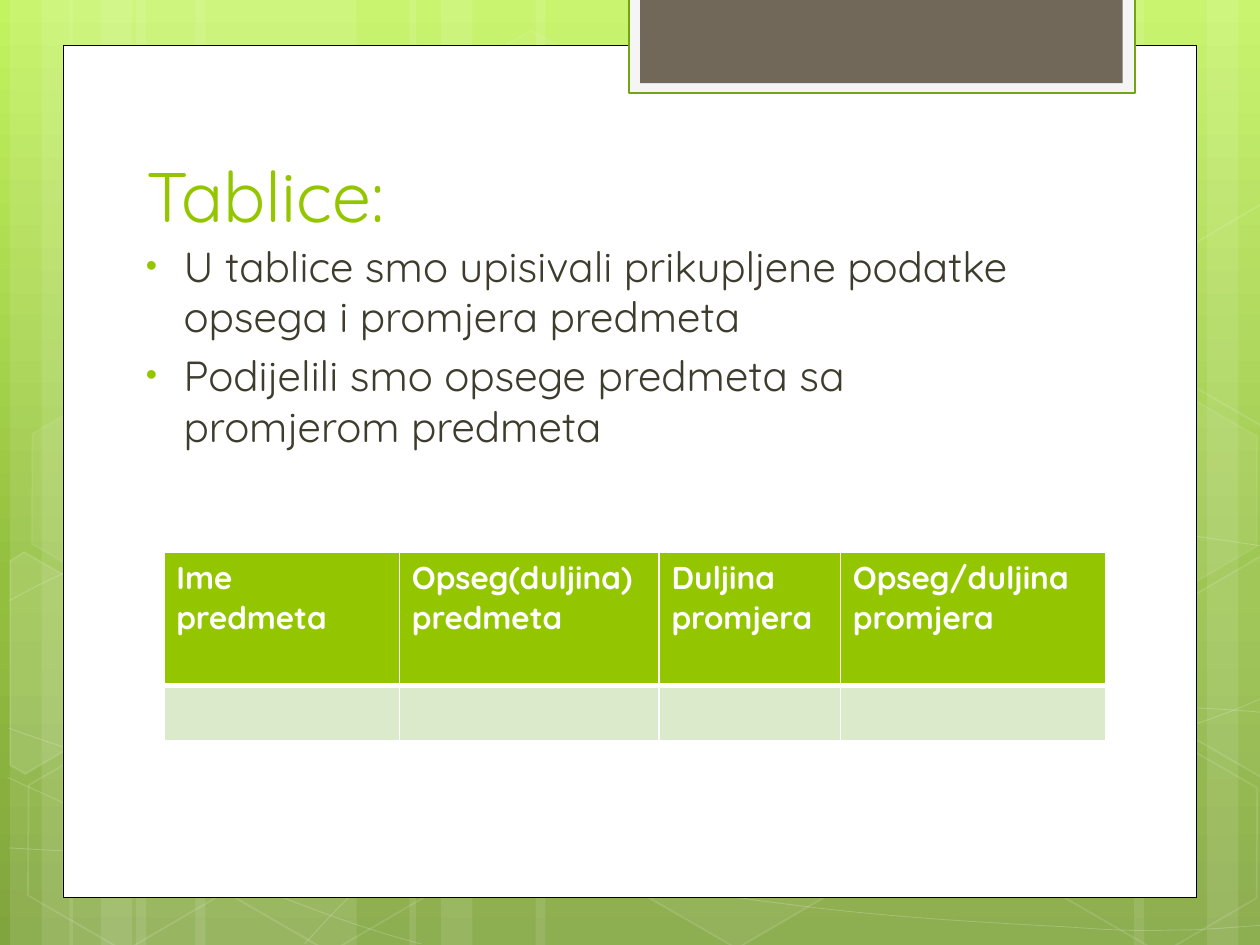
from copy import deepcopy
from dataclasses import dataclass
from math import cos, radians, sin

from lxml.etree import SubElement
from pptx import Presentation
from pptx.dml.color import RGBColor
from pptx.enum.shapes import MSO_SHAPE
from pptx.enum.text import MSO_ANCHOR, MSO_AUTO_SIZE, PP_ALIGN
from pptx.oxml.ns import qn
from pptx.util import Inches, Pt


@dataclass(frozen=True)
class Theme:
    font: str = "Quicksand"
    white: str = "FFFFFF"
    accent: str = "94C600"
    body: str = "3E3D2D"
    black: str = "000000"
    tab_frame: str = "F5F5F5"
    tab_line: str = "74A510"
    tab_fill: str = "71685A"
    row_fill: str = "DCEACC"
    backdrop: tuple = ((0, "C3F35F"), (0.62, "93BF3F"), (1, "81A53E"))
    title_size: int = 40
    body_size: int = 24
    table_size: int = 18


@dataclass(frozen=True)
class Box:
    left: float
    top: float
    width: float
    height: float

    def inside(self, left, top, width, height):
        return Box(self.left + left, self.top + top, width, height)

    def lengths(self):
        return [Inches(v) for v in (self.left, self.top, self.width, self.height)]


THEME = Theme()
TILT = 30

# Hexagons: left, top, fill opacity (0 = none), line opacity
HEXAGONS = [
    (3.34, 0.36, 4, 8), (4.97, 5.89, 6, 12), (0.11, 5.91, 0, 12),
    (0.14, 3.12, 7, 8), (1.74, 5.92, 0, 12), (7.53, 4.53, 10, 12),
    (8.34, 5.93, 0, 12), (8.34, 3.14, 7, 8),
]
# Hexagons cut by the slide edge, with the centre of their tilted frames
LEFT_CUT = [(0.08, 4.45), (0.19, 4.38), (0.96, 4.82), (0.95, 5.7), (0.2, 6.14), (0.08, 6.07)]
LEFT_CENTRE = (0.36, 5.35)
RIGHT_CUT = [(9.26, 4.85), (10.01, 4.41), (10.09, 4.46), (10.09, 6.13), (10.02, 6.17), (9.26, 5.73)]
RIGHT_CENTRE = (9.85, 5.2)
RIGHT_CUT_RISE = 2.79
# Sweeping lines: a start point, then three points for each cubic segment
CURVES = [
    [(0.07, 6.73), (0.61, 6.76), (1.15, 6.79), (1.9, 6.78), (2.65, 6.77), (3.58, 6.75), (4.58, 6.65),
     (5.58, 6.55), (7, 6.36), (7.92, 6.17), (8.83, 5.98), (9.77, 5.68), (10.07, 5.51)],
    [(0.07, 4.77), (0.36, 4.61), (0.65, 4.46), (1.21, 4.31), (1.78, 4.16), (2.59, 3.94), (3.47, 3.87),
     (4.36, 3.8), (5.44, 3.79), (6.54, 3.87), (7.64, 3.95), (9.47, 4.26), (10.07, 4.34)],
    [(0.06, 6.17), (1.27, 6.72), (2.47, 7.27), (3.34, 7.49)],
    [(0.07, 5.78), (0.38, 5.89), (0.7, 6), (1.28, 6.16), (1.86, 6.31), (2.73, 6.56), (3.57, 6.73),
     (4.4, 6.9), (5.45, 7.08), (6.28, 7.18), (7.11, 7.29), (8, 7.33), (8.53, 7.36),
     (9.05, 7.4), (9.19, 7.38), (9.45, 7.38), (9.71, 7.37), (9.89, 7.35), (10.07, 7.34)],
    [(2.42, 7.49), (2.6, 7.29), (2.78, 7.09), (3.02, 6.91), (3.26, 6.73), (3.6, 6.53), (3.88, 6.39),
     (4.16, 6.25), (4.33, 6.19), (4.7, 6.09), (5.06, 5.99), (5.73, 5.85), (6.08, 5.78),
     (6.44, 5.71), (6.49, 5.71), (6.8, 5.69), (7.11, 5.66), (7.6, 5.63), (7.94, 5.62),
     (8.29, 5.61), (8.86, 5.62), (8.86, 5.62), (8.86, 5.62), (9.53, 5.62), (9.53, 5.62),
     (9.71, 5.63), (9.88, 5.64), (9.97, 5.65), (10.06, 5.66), (10.03, 5.65), (10.06, 5.66)],
]
BULLETS = [
    "U tablice smo upisivali prikupljene podatke opsega i promjera predmeta",
    "Podijelili smo opsege predmeta sa promjerom predmeta",
]
HEADERS = ["Ime predmeta", "Opseg(duljina) predmeta", "Duljina promjera", "Opseg/duljina promjera"]


def paint(fill, color, opacity=100):
    """Colour a fill; zero opacity leaves it empty."""
    if not opacity:
        fill.background()
        return
    fill.solid()
    fill.fore_color.rgb = RGBColor.from_string(color)
    if opacity < 100:
        for tone in fill._xPr.iter(qn("a:srgbClr")):
            SubElement(tone, qn("a:alpha"), val=str(opacity * 1000))


def style(shape, fill, opacity=100, line=None, line_width=0, line_opacity=100):
    shape.shadow.inherit = False
    paint(shape.fill, fill, opacity)
    if line:
        shape.line.width = Pt(line_width)
        paint(shape.line.fill, line, line_opacity)
    else:
        shape.line.fill.background()


def set_font(para, size, color, bold=False):
    para.font.name, para.font.size, para.font.bold = THEME.font, Pt(size), bold
    para.font.color.rgb = RGBColor.from_string(color)


def add_rect(page, box, *colors, **options):
    style(page.shapes.add_shape(MSO_SHAPE.RECTANGLE, *box.lengths()), *colors, **options)


def add_outline(page, box, points, closed, **options):
    spots = [(Inches(box.left + x), Inches(box.top + y)) for x, y in points]
    builder = page.shapes.build_freeform(*spots[0])
    builder.add_line_segments(spots[1:], close=closed)
    shape = builder.convert_to_shape()
    style(shape, THEME.white, line=THEME.white, **options)
    return shape


def add_curve(page, box, points):
    """Draw a chain of cubic segments, three points each."""
    shape = add_outline(page, box, points, False, opacity=0, line_width=0.5, line_opacity=20)
    steps = list(shape._element.iter(qn("a:lnTo")))
    for first in range(0, len(steps), 3):
        outline = steps[first].getparent()
        cubic = SubElement(outline, qn("a:cubicBezTo"))
        for step in steps[first:first + 3]:
            cubic.append(step[0])
            outline.remove(step)


def add_cut_hexagon(page, box, points, centre, opacity):
    """Turn the points back, then tilt the whole shape."""
    c, s = cos(radians(TILT)), sin(radians(TILT))
    shifts = [(x - centre[0], y - centre[1]) for x, y in points]
    level = [(centre[0] + x * c + y * s, centre[1] - x * s + y * c) for x, y in shifts]
    shape = add_outline(page, box, level, True, opacity=opacity, line_width=1, line_opacity=12)
    shape.rotation = TILT


def draw_backdrop(page, box):
    # Gradient
    fill = page.background.fill
    fill.gradient()
    fill.gradient_angle = 270
    last = fill.gradient_stops[1]._gs
    last.addnext(deepcopy(last))
    for stop, (position, color) in zip(fill.gradient_stops, THEME.backdrop):
        stop.position = position
        stop.color.rgb = RGBColor.from_string(color)

    # Stripe fans: start, width of the widest stripe, mirrored
    for start, widest, mirrored in [(0.08, 1.75, False), (0.55, 1.75, False),
                                    (10.08, 1.75, True), (3.25, 3.08, False)]:
        for offset, width in [(1, widest), (0, 0.5), (0.25, 0.83)]:
            left = start - offset - width if mirrored else start + offset
            add_rect(page, box.inside(left, 0, width, box.height), THEME.white, 10)

    # Sweeping lines
    for curve in CURVES:
        add_curve(page, box, curve)

    # Hexagons, whole and cut
    for left, top, opacity, line_opacity in HEXAGONS:
        hexagon = page.shapes.add_shape(MSO_SHAPE.HEXAGON, *box.inside(left, top, 1.75, 1.52).lengths())
        hexagon.adjustments[0] = 0.285
        hexagon.rotation = TILT
        style(hexagon, THEME.white, opacity, THEME.white, 1, line_opacity)
    add_cut_hexagon(page, box, LEFT_CUT, LEFT_CENTRE, 10)
    for rise, opacity in [(0, 4), (RIGHT_CUT_RISE, 0)]:
        add_cut_hexagon(page, box.inside(0, -rise, box.width, box.height), RIGHT_CUT, RIGHT_CENTRE, opacity)


def draw_panel(page, box):
    add_rect(page, box, THEME.white, line=THEME.black, line_width=0.5)
    # Tab hanging from the top edge
    add_rect(page, box.inside(4.49, -0.38, 4.02, 0.76), THEME.tab_frame, line=THEME.tab_line, line_width=1.25)
    add_rect(page, box.inside(4.58, -0.38, 3.83, 0.68), THEME.tab_fill)


def place_title(page, box, text):
    title = page.shapes.title
    title._element.getparent().append(title._element)  # bring in front of the panel
    title.left, title.top, title.width, title.height = box.lengths()
    frame = title.text_frame
    frame.text = text
    frame.auto_size = MSO_AUTO_SIZE.NONE
    frame.vertical_anchor = MSO_ANCHOR.BOTTOM
    frame.paragraphs[0].alignment = PP_ALIGN.LEFT
    set_font(frame.paragraphs[0], THEME.title_size, THEME.accent)


def add_bullets(page, box, lines):
    frame = page.shapes.add_textbox(*box.lengths()).text_frame
    frame.word_wrap = True
    frame.text = "\n".join(lines)
    for para in frame.paragraphs:
        set_font(para, THEME.body_size, THEME.body)
        para.space_before = Pt(0.2 * THEME.body_size)
        props = para._p.get_or_add_pPr()
        props.set("marL", str(Inches(0.38)))
        props.set("indent", str(Inches(-0.3)))
        SubElement(SubElement(props, qn("a:buClr")), qn("a:srgbClr"), val=THEME.accent)
        SubElement(props, qn("a:buSzPct"), val="76000")
        SubElement(props, qn("a:buFont"), typeface="Arial")
        SubElement(props, qn("a:buChar"), char="•")
        props.append(props.find(qn("a:defRPr")))  # schema order: after the bullet


def add_borders(cell, top, bottom):
    props = cell._tc.get_or_add_tcPr()
    for side, width in [("L", 1), ("R", 1), ("T", top), ("B", bottom)]:
        line = SubElement(props, qn(f"a:ln{side}"), w=str(Pt(width)))
        SubElement(SubElement(line, qn("a:solidFill")), qn("a:srgbClr"), val=THEME.white)


def add_data_table(page, box, headers):
    table = page.shapes.add_table(2, len(headers), *box.lengths()).table
    for column, width in zip(table.columns, [1.87, 2.06, 1.44, 2.11]):
        column.width = Inches(width)
    rows = [(1.06, headers, THEME.accent, 1, 3), (0.44, [], THEME.row_fill, 3, 1)]
    for row, (height, texts, color, top, bottom) in zip(table.rows, rows):
        row.height = Inches(height)
        for cell, text in zip(row.cells, texts):
            cell.text = text
            set_font(cell.text_frame.paragraphs[0], THEME.table_size, THEME.white, bold=True)
        for cell in row.cells:
            add_borders(cell, top, bottom)
            paint(cell.fill, color)


def main():
    deck = Presentation()
    deck.slide_width, deck.slide_height = Inches(10), Inches(7.5)
    page = deck.slides.add_slide(deck.slide_layouts[5])
    draw_backdrop(page, Box(0, 0, 10, 7.5))
    draw_panel(page, Box(0.5, 0.36, 9, 6.76))
    place_title(page, Box(1.06, 0.68, 7.68, 1.25), "Tablice:")
    add_bullets(page, Box(0.98, 1.86, 7.41, 2.2), BULLETS)
    add_data_table(page, Box(1.3, 4.38, 7.48, 1.5), HEADERS)
    deck.save("out.pptx")


if __name__ == "__main__":
    main()
